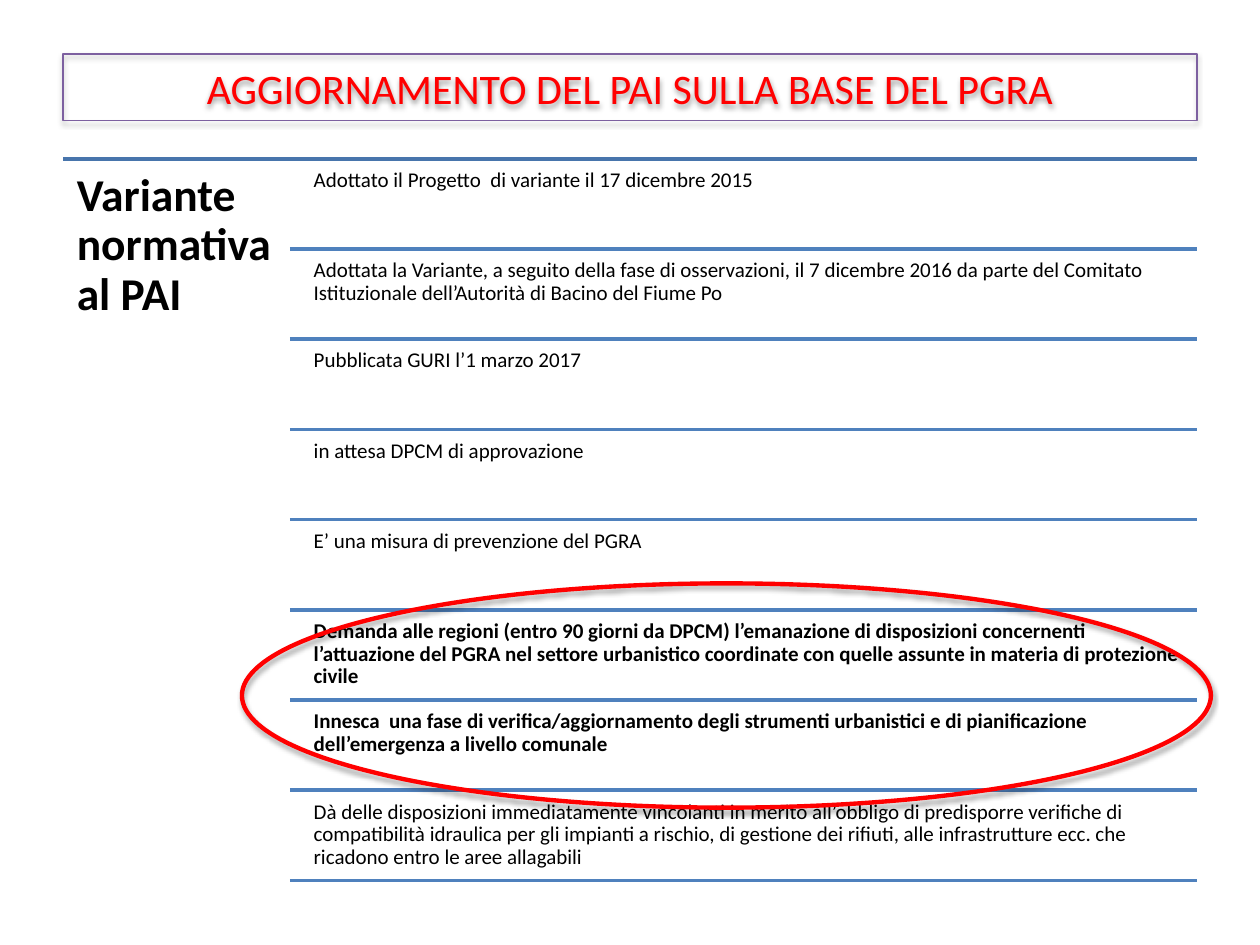
from lxml.etree import SubElement
from pptx import Presentation
from pptx.dml.color import RGBColor
from pptx.enum.shapes import MSO_CONNECTOR as Connector, MSO_SHAPE as Shape
from pptx.enum.text import MSO_ANCHOR as Anchor, PP_ALIGN as Align
from pptx.oxml.ns import qn
from pptx.util import Inches, Pt

COLOURS = {
    "accent": "FF0000",
    "frame": "7D60A0",
    "top_rule": "4875AC",
    "rule": "4F81BD",
    "text": "000000",
    "shadow": "000000",
}
FONT = "Calibri"

# Grid: five equal columns (one for the heading), one row per step
LEFT, TOP, WIDTH = 0.5, 1.26, 9
COLUMN = WIDTH / 5
RIGHT = LEFT + WIDTH
ROW = 0.716
ROW_GAP = 0.035
STEP_LINE_LEFT = LEFT + COLUMN
STEP_TEXT_LEFT = STEP_LINE_LEFT + 0.14

TITLE = "AGGIORNAMENTO DEL PAI SULLA BASE DEL PGRA"
HEADING = "Variante normativa al PAI"
# Each step: text, bold
STEPS = [
    ("Adottato il Progetto  di variante il 17 dicembre 2015", False),
    ("Adottata la Variante, a seguito della fase di osservazioni, il 7 dicembre 2016 "
     "da parte del Comitato Istituzionale dell’Autorità di Bacino del Fiume Po", False),
    ("Pubblicata GURI l’1 marzo 2017", False),
    ("in attesa DPCM di approvazione", False),
    ("E’ una misura di prevenzione del PGRA", False),
    ("Demanda alle regioni (entro 90 giorni da DPCM) l’emanazione di disposizioni "
     "concernenti l’attuazione del PGRA nel settore urbanistico coordinate con quelle "
     "assunte in materia di protezione civile", True),
    ("Innesca  una fase di verifica/aggiornamento degli strumenti urbanistici e di "
     "pianificazione dell’emergenza a livello comunale", True),
    ("Dà delle disposizioni immediatamente vincolanti in merito all’obbligo di "
     "predisporre verifiche di compatibilità idraulica per gli impianti a rischio, di "
     "gestione dei rifiuti, alle infrastrutture ecc. che ricadono entro le aree "
     "allagabili", False),
]


def colour(name):
    return RGBColor.from_string(COLOURS[name])


def set_attributes(target, values):
    for name, value in values.items():
        setattr(target, name, value)


def write_text(shape, text, size, ink="text", bold=False, frame=None, para=None):
    set_attributes(shape.text_frame, {"word_wrap": True, **(frame or {})})
    paragraph = shape.text_frame.paragraphs[0]
    set_attributes(paragraph, para or {})
    span = paragraph.add_run()
    span.text = text
    set_attributes(span.font, {"name": FONT, "size": Pt(size), "bold": bold})
    span.font.color.rgb = colour(ink)


def add_text(shapes, left, top, width, height, text, size, inset, bold=False):
    box = shapes.add_textbox(*map(Inches, (left, top, width, height)))
    margins = {f"margin_{side}": Inches(inset)
               for side in ("left", "top", "right", "bottom")}
    write_text(box, text, size, bold=bold, frame=margins, para={"line_spacing": 0.9})


def add_rule(shapes, left, y, ink):
    rule = shapes.add_connector(Connector.STRAIGHT, *map(Inches, (left, y, RIGHT, y)))
    rule.line.color.rgb = colour(ink)
    rule.line.width = Pt(2)
    SubElement(rule._element.spPr, qn("a:effectLst"))


def add_outline(shapes, kind, bounds, ink, weight, distance, opacity):
    """Add an unfilled outline with a soft shadow falling straight down."""
    outline = shapes.add_shape(kind, *map(Inches, bounds))
    outline.fill.background()
    outline.line.color.rgb = colour(ink)
    outline.line.width = Pt(weight)
    outline.shadow.inherit = False
    effects = outline._element.spPr.find(qn("a:effectLst"))
    shadow = SubElement(effects, qn("a:outerShdw"), blurRad=str(Pt(3.1)),
                        dist=str(Pt(distance)), dir="5400000", rotWithShape="0")
    tint = SubElement(shadow, qn("a:srgbClr"), val=COLOURS["shadow"])
    SubElement(tint, qn("a:alpha"), val=str(opacity * 1000))
    return outline


def add_steps(shapes):
    for index, (text, bold) in enumerate(STEPS):
        top = TOP + index * ROW
        add_text(shapes, STEP_TEXT_LEFT, top + ROW_GAP, RIGHT - STEP_TEXT_LEFT,
                 ROW - ROW_GAP, text, 12, 0.05, bold)
        add_rule(shapes, STEP_LINE_LEFT, top + ROW, "rule")


def main():
    deck = Presentation()
    set_attributes(deck, {"slide_width": Inches(10), "slide_height": Inches(7.5)})
    page = deck.slides.add_slide(deck.slide_layouts[6])

    # Framed title
    title = add_outline(page.shapes, Shape.RECTANGLE, (LEFT, 0.43, WIDTH, 0.53),
                        "frame", 0.75, 1.6, 38)
    write_text(title, TITLE, 24, "accent", frame={"vertical_anchor": Anchor.MIDDLE},
               para={"alignment": Align.CENTER})

    # Heading column and ruled list of steps
    listing = page.shapes.add_group_shape().shapes
    add_rule(listing, LEFT, TOP, "top_rule")
    add_text(listing, LEFT, TOP, COLUMN, ROW * len(STEPS), HEADING, 26, 0.11, True)
    add_steps(listing)

    # Ring around the two key steps
    add_outline(page.shapes, Shape.OVAL, (1.92, 4.63, 7.69, 1.78),
                "accent", 2.5, 1.8, 35)

    deck.save("out.pptx")


if __name__ == "__main__":
    main()
